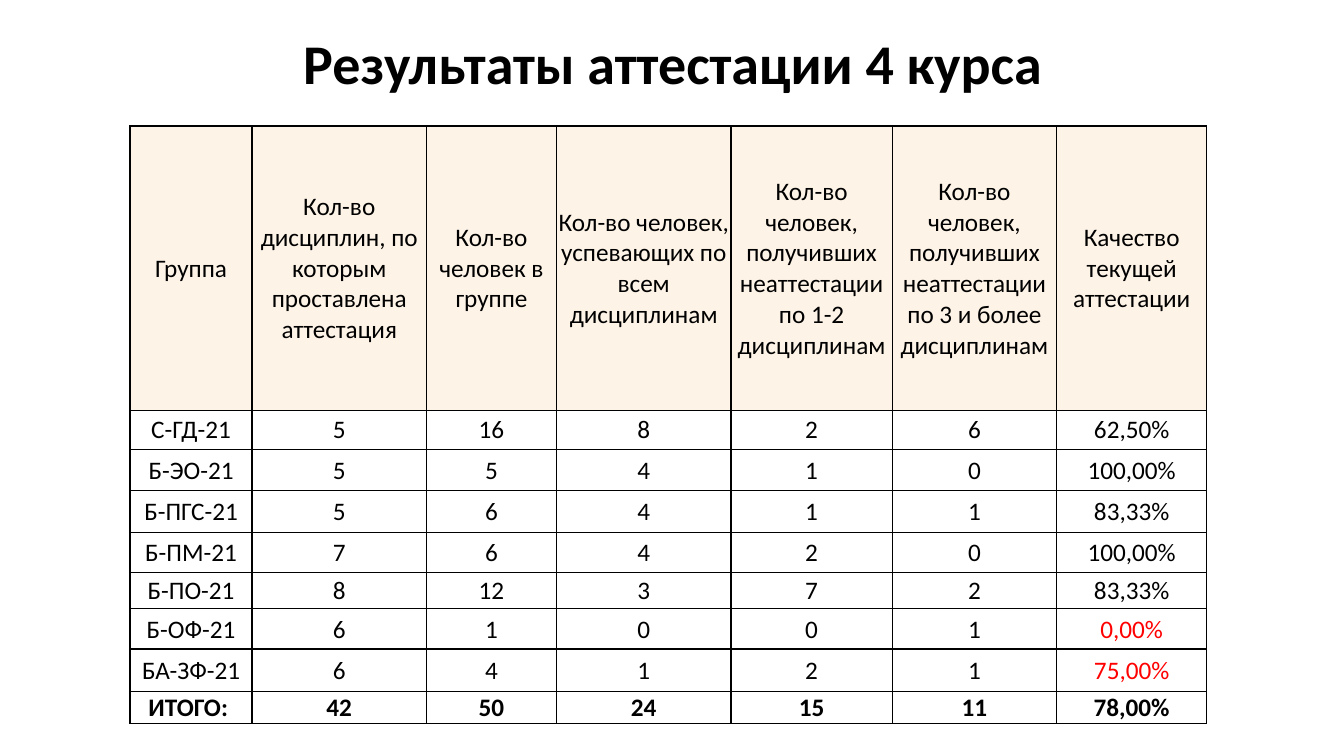
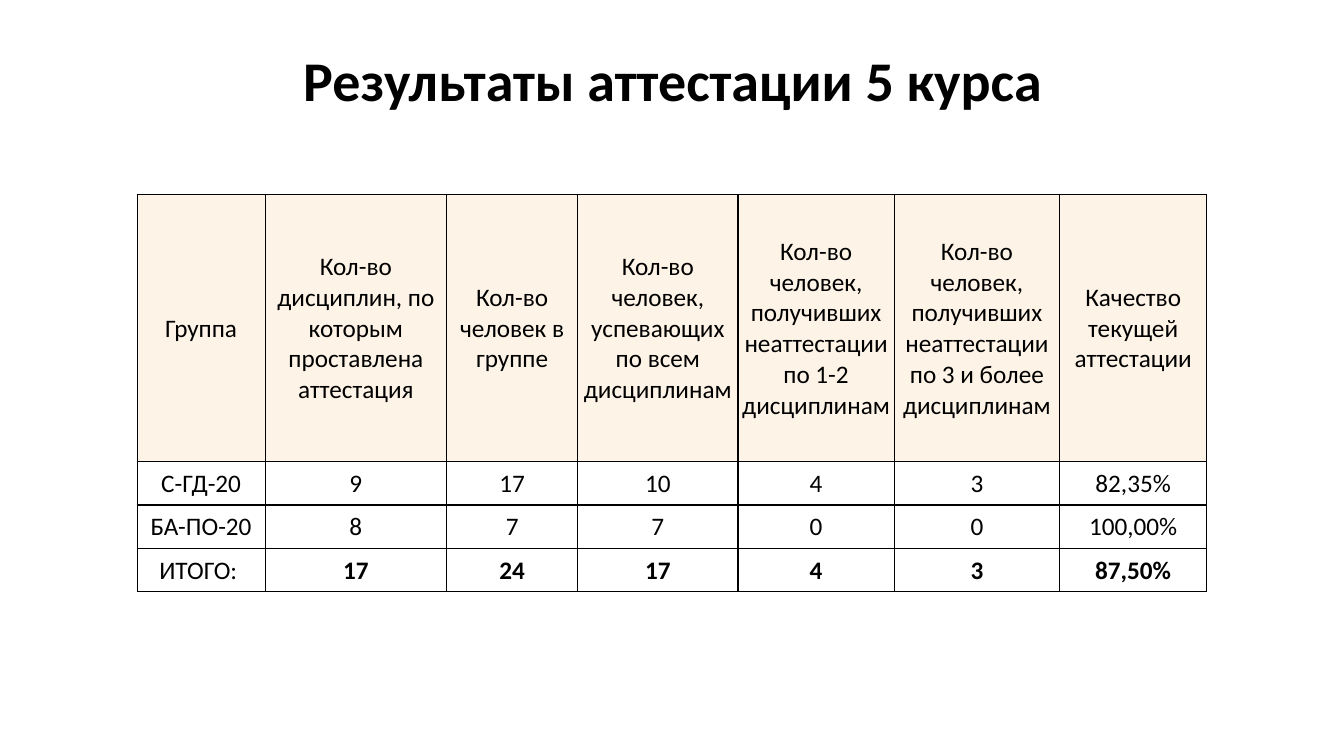
import dataclasses

import lxml.etree
import pptx
import pptx.dml.color
import pptx.enum.text
import pptx.oxml.ns
import pptx.util

Inches = pptx.util.Inches
Pt = pptx.util.Pt


@dataclasses.dataclass(frozen=True)
class Theme:
    """Colours, font and type sizes shared by the slides."""

    font: str = "Calibri"
    text: str = "000000"
    alert: str = "FF0000"
    border: str = "000000"
    header_fill: str = "FEF3E7"
    title_size: int = 40
    table_size: int = 18
    border_width: int = 1


THEME = Theme()

HEADERS = [
    "Группа",
    "Кол-во дисциплин, по которым проставлена аттестация",
    "Кол-во человек в группе",
    "Кол-во человек, успевающих по всем дисциплинам",
    "Кол-во человек, получивших неаттестации по 1-2 дисциплинам",
    "Кол-во человек, получивших неаттестации по 3 и более дисциплинам",
    "Качество текущей аттестации",
]

COURSES = [
    {
        "title": "Результаты аттестации 4 курса",
        "title_box": (0.92, 0.06, 11.5, 1.19),
        "table_box": (1.29, 1.25, 10.67, 5.92),
        "columns": [1.21, 1.73, 1.29, 1.73, 1.6, 1.63, 1.49],
        "heights": [2.82, 0.39, 0.41, 0.41, 0.4, 0.36, 0.4, 0.42, 0.32],
        "groups": [
            ["С-ГД-21", 5, 16, 8, 2, 6, "62,50%"],
            ["Б-ЭО-21", 5, 5, 4, 1, 0, "100,00%"],
            ["Б-ПГС-21", 5, 6, 4, 1, 1, "83,33%"],
            ["Б-ПМ-21", 7, 6, 4, 2, 0, "100,00%"],
            ["Б-ПО-21", 8, 12, 3, 7, 2, "83,33%"],
            ["Б-ОФ-21", 6, 1, 0, 0, 1, "0,00%"],
            ["БА-ЗФ-21", 6, 4, 1, 2, 1, "75,00%"],
        ],
        "total": ["ИТОГО: ", 42, 50, 24, 15, 11, "78,00%"],
        "total_label_bold": True,
        "alerts": {"0,00%", "75,00%"},
    },
    {
        "title": "Результаты аттестации 5 курса",
        "title_box": (0.92, 0.4, 11.5, 0.85),
        "table_box": (1.36, 1.93, 10.61, 3.94),
        "columns": [1.27, 1.8, 1.3, 1.59, 1.55, 1.64, 1.46],
        "heights": [2.65, 0.43, 0.43, 0.43],
        "groups": [
            ["С-ГД-20", 9, 17, 10, 4, 3, "82,35%"],
            ["БА-ПО-20", 8, 7, 7, 0, 0, "100,00%"],
        ],
        "total": ["ИТОГО: ", 17, 24, 17, 4, 3, "87,50%"],
        "total_label_bold": False,
        "alerts": set(),
    },
]


def write_centred(paragraph, text, size, colour, bold):
    """Add one formatted run to a centred paragraph."""
    paragraph.alignment = pptx.enum.text.PP_ALIGN.CENTER
    run = paragraph.add_run()
    run.text = text
    run.font.name = THEME.font
    run.font.size = Pt(size)
    run.font.bold = bold
    run.font.color.rgb = pptx.dml.color.RGBColor.from_string(colour)


def add_borders(cell):
    """Draw a solid line on each side of a cell."""
    qn = pptx.oxml.ns.qn
    properties = cell._tc.get_or_add_tcPr()
    for side in ("a:lnL", "a:lnR", "a:lnT", "a:lnB"):
        line = lxml.etree.SubElement(properties, qn(side), w=str(Pt(THEME.border_width)))
        fill = lxml.etree.SubElement(line, qn("a:solidFill"))
        lxml.etree.SubElement(fill, qn("a:srgbClr"), val=THEME.border)


def format_cell(cell, text, fill=None, colour=THEME.text, bold=False):
    """Fill one table cell with bordered, centred text."""
    cell.margin_left = cell.margin_right = cell.margin_top = Inches(0.01)
    cell.margin_bottom = 0
    cell.vertical_anchor = pptx.enum.text.MSO_ANCHOR.MIDDLE
    add_borders(cell)
    if fill:
        cell.fill.solid()
        cell.fill.fore_color.rgb = pptx.dml.color.RGBColor.from_string(fill)
    else:
        cell.fill.background()
    write_centred(cell.text_frame.paragraphs[0], text, THEME.table_size, colour, bold)


def place_title(slide, text, box):
    """Move the title placeholder into its box and write the heading."""
    title = slide.shapes.title
    title.left, title.top, title.width, title.height = map(Inches, box)
    frame = title.text_frame
    frame.word_wrap = True
    frame.auto_size = pptx.enum.text.MSO_AUTO_SIZE.NONE
    frame.vertical_anchor = pptx.enum.text.MSO_ANCHOR.MIDDLE
    heading = frame.paragraphs[0]
    heading.line_spacing = 0.9
    write_centred(heading, text, THEME.title_size, THEME.text, True)


def place_results(slide, course, box):
    """Build the table of group results in its box."""
    rows = [HEADERS, *course["groups"], course["total"]]
    table = slide.shapes.add_table(len(rows), len(HEADERS), *map(Inches, box)).table
    table.first_row = table.horz_banding = False
    for column, width in zip(table.columns, course["columns"]):
        column.width = Inches(width)
    for row, height in zip(table.rows, course["heights"]):
        row.height = Inches(height)
    for row_index, values in enumerate(rows):
        is_total = row_index == len(rows) - 1
        for column_index, value in enumerate(values):
            format_cell(
                table.cell(row_index, column_index),
                str(value),
                fill=THEME.header_fill if row_index == 0 else None,
                colour=THEME.alert if value in course["alerts"] else THEME.text,
                bold=is_total and (column_index > 0 or course["total_label_bold"]),
            )


def add_course_slide(deck, course):
    """Add a slide with the heading and results of one course."""
    slide = deck.slides.add_slide(deck.slide_layouts.get_by_name("Title Only"))
    place_title(slide, course["title"], course["title_box"])
    place_results(slide, course, course["table_box"])


def main():
    """Build and save the presentation."""
    deck = pptx.Presentation()
    deck.slide_width = Inches(13.33)
    deck.slide_height = Inches(7.5)
    for course in COURSES:
        add_course_slide(deck, course)
    deck.save("out.pptx")


if __name__ == "__main__":
    main()
